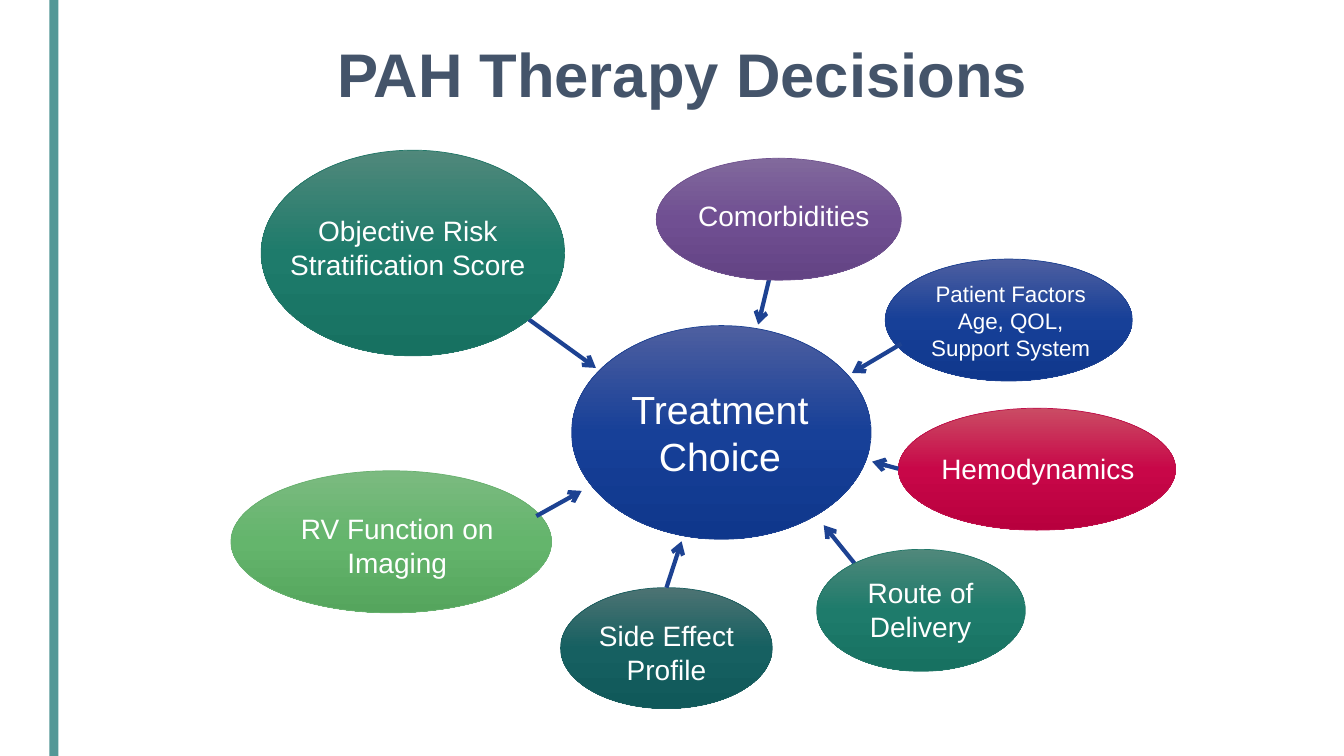
from copy import deepcopy

from pptx import Presentation
from pptx.dml.color import RGBColor
from pptx.enum.shapes import MSO_CONNECTOR, MSO_SHAPE
from pptx.enum.text import MSO_ANCHOR, PP_ALIGN
from pptx.oxml.ns import qn
from pptx.util import Inches, Pt
from lxml.etree import SubElement

FONT = "Arial"
COLORS = {"bar": "549897", "title": "44546A", "text": "FFFFFF", "arrow": "1D4292"}

# Gradient from top to bottom, then the outline
BUBBLE_COLORS = {
    "green": ("50887B", "1E7B6B", "177161", "227768"),
    "blue": ("4E5FA0", "174098", "0F378C", "1D4292"),
    "teal": ("4D7373", "166061", "10595A", "195D5E"),
    "purple": ("81699C", "704F92", "634384", "70528F"),
    "red": ("CA4C64", "C80748", "B8003E", "BF104B"),
    "light green": ("7BBA80", "64B56C", "55A55D", "68B16F"),
}

# Left, top, width, height
BUBBLES = [
    ("green", (2.59, 1.49, 3.01, 2.04)),
    ("blue", (5.67, 3.23, 2.97, 2.12)),
    ("teal", (5.56, 5.83, 2.1, 1.2)),
    ("purple", (6.51, 1.57, 2.43, 1.21)),
    ("blue", (8.78, 2.57, 2.45, 1.21)),
    ("red", (8.91, 4.05, 2.75, 1.21)),
    ("light green", (2.29, 4.67, 3.18, 1.41)),
    ("green", (8.1, 5.45, 2.07, 1.21)),
]
LABELS = [
    ("Comorbidities", 20, (6.61, 1.92, 2.33, 0.44)),
    ("Hemodynamics", 20, (8.98, 4.43, 2.63, 0.44)),
    ("RV Function on Imaging", 20, (2.73, 5.03, 2.42, 0.77)),
    ("Objective Risk Stratification Score", 20, (2.59, 2.07, 2.91, 0.77)),
    ("Treatment Choice", 28, (6.02, 3.77, 2.24, 1.04)),
    ("Side Effect Profile", 20, (5.49, 6.09, 2.24, 0.77)),
    ("Route of Delivery", 20, (8.24, 5.66, 1.78, 0.77)),
    ("Patient Factors\nAge, QOL,\nSupport System", 16, (7.74, 2.73, 4.57, 0.91)),
]

# Start x, start y, end x, end y
ARROWS_BEHIND = [
    (5.15, 3.1, 5.91, 3.65),
    (7.66, 2.64, 7.52, 3.22),
    (8.5, 5.62, 8.17, 5.21),
]
ARROWS_IN_FRONT = [
    (5.32, 5.12, 5.77, 4.87),
    (8.94, 3.41, 8.45, 3.7),
    (8.91, 4.65, 8.65, 4.58),
    (6.61, 5.83, 6.76, 5.37),
]


def rgb(value):
    return RGBColor.from_string(value)


def inches(lengths):
    return [Inches(length) for length in lengths]


def format_paragraph(paragraph, size, color, bold=False):
    paragraph.alignment = PP_ALIGN.CENTER
    font = paragraph.font if not paragraph.runs else paragraph.runs[0].font
    font.name, font.size, font.bold = FONT, Pt(size), bold
    font.color.rgb = rgb(color)


def add_title(slide, text):
    title = slide.shapes.title
    title.left, title.top, title.width, title.height = inches((1.02, 0.04, 11.5, 1.45))
    frame = title.text_frame
    frame.text = text
    frame.vertical_anchor = MSO_ANCHOR.MIDDLE
    frame.paragraphs[0].line_spacing = 0.9
    format_paragraph(frame.paragraphs[0], 44, COLORS["title"], bold=True)


def add_side_bar(slide):
    bar = slide.shapes.add_shape(MSO_SHAPE.RECTANGLE, *inches((0.49, 0, 0.09, 7.5)))
    bar.shadow.inherit = False
    bar.fill.solid()
    bar.fill.fore_color.rgb = rgb(COLORS["bar"])
    bar.line.fill.background()


def add_bubble(slide, color_name, box):
    *gradient, outline = BUBBLE_COLORS[color_name]
    bubble = slide.shapes.add_shape(MSO_SHAPE.OVAL, *inches(box))
    bubble.shadow.inherit = False
    bubble.fill.gradient()
    bubble.fill.gradient_angle = 270
    # The default gradient has two stops; add a third
    stop_list = bubble.element.spPr.find(qn("a:gradFill")).find(qn("a:gsLst"))
    stop_list.insert(1, deepcopy(stop_list[0]))
    for stop, color, position in zip(bubble.fill.gradient_stops, gradient, (0, 0.5, 1)):
        stop.color.rgb = rgb(color)
        stop.position = position
    bubble.line.color.rgb = rgb(outline)
    bubble.line.width = Pt(0.5)


def add_label(slide, text, size, box):
    frame = slide.shapes.add_textbox(*inches(box)).text_frame
    frame.word_wrap = True
    frame.text = text
    for paragraph in frame.paragraphs:
        format_paragraph(paragraph, size, COLORS["text"])


def add_arrow(slide, ends):
    arrow = slide.shapes.add_connector(MSO_CONNECTOR.STRAIGHT, *inches(ends))
    arrow.line.color.rgb = rgb(COLORS["arrow"])
    arrow.line.width = Pt(3)
    properties = arrow.element.spPr
    SubElement(properties.find(qn("a:ln")), qn("a:tailEnd"), type="arrow")
    SubElement(properties, qn("a:effectLst"))


def main():
    presentation = Presentation()
    presentation.slide_width, presentation.slide_height = inches((13.33, 7.5))
    slide = presentation.slides.add_slide(presentation.slide_layouts[5])

    # Frame of the slide
    add_side_bar(slide)
    add_title(slide, "PAH Therapy Decisions")

    # Factors around the treatment choice
    for ends in ARROWS_BEHIND:
        add_arrow(slide, ends)
    for color_name, box in BUBBLES:
        add_bubble(slide, color_name, box)
    for ends in ARROWS_IN_FRONT:
        add_arrow(slide, ends)
    for text, size, box in LABELS:
        add_label(slide, text, size, box)

    presentation.save("out.pptx")


if __name__ == "__main__":
    main()
